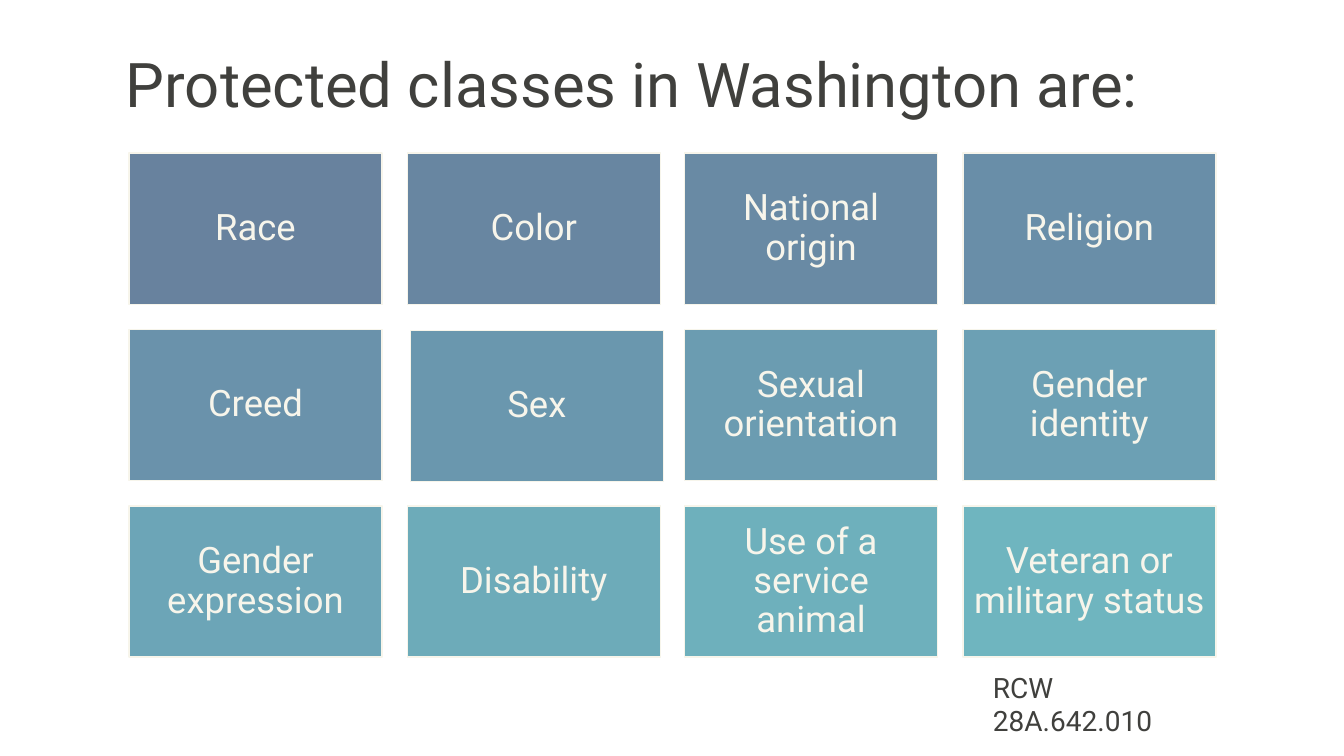
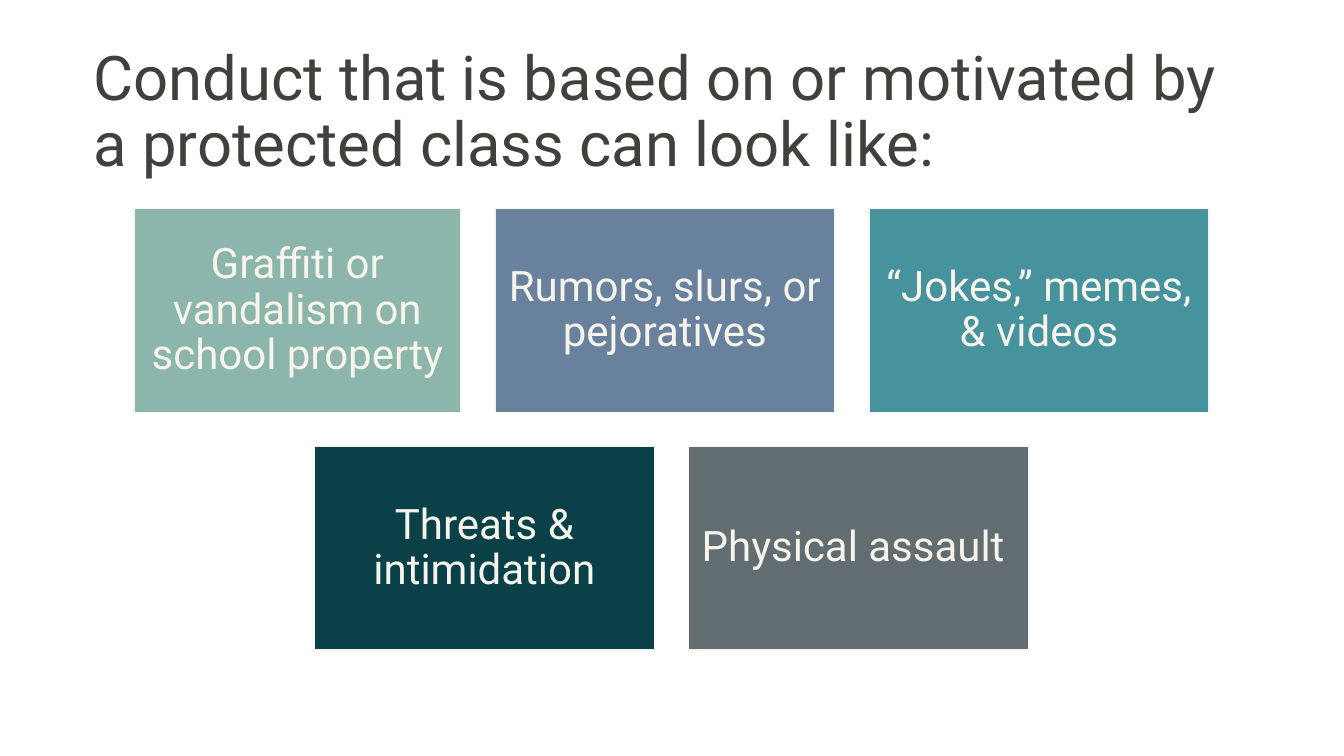
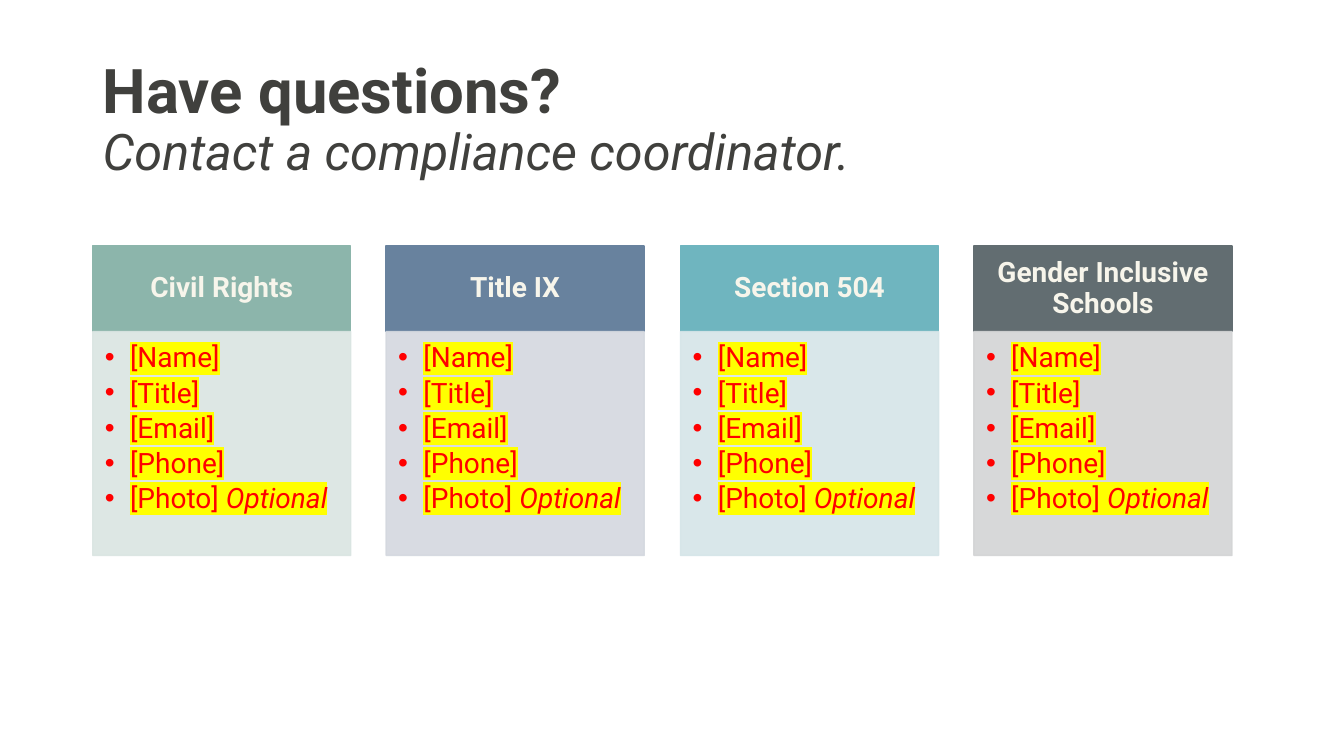
from dataclasses import dataclass

from lxml import etree
from pptx import Presentation
from pptx import util as u
from pptx.dml import color
from pptx.enum import shapes, text
from pptx.oxml import ns

PX = 9144


@dataclass(frozen=True)
class Theme:
    font: str = "Roboto"
    ink: str = "40403D"
    cream: str = "F7F5EB"
    sage: str = "8CB5AB"
    slate: str = "68829E"
    teal: str = "46929D"
    aqua: str = "6FB5BF"
    deep: str = "0A4149"
    gray: str = "626D71"
    pale_sage: str = "DAE5E2"
    pale_slate: str = "D4D8DF"
    pale_aqua: str = "D5E5E8"
    pale_gray: str = "D3D4D5"
    prompt: str = "FF0000"
    marker: str = "FFFF00"
    title_size: int = 44
    subtitle_size: int = 36
    conduct_size: int = 30
    class_size: int = 26
    small_size: int = 20
    line_spacing: float = 0.9
    pale_opacity: int = 90


THEME = Theme()

CLASSES = [
    ("Race", THEME.slate), ("Color", "6886A1"),
    ("National origin", "698AA4"), ("Religion", "698EA8"),
    ("Creed", "6A92AB"), ("Sex", "6A97AE"),
    ("Sexual orientation", "6B9CB1"), ("Gender identity", "6CA0B4"),
    ("Gender expression", "6CA5B7"), ("Disability", "6DABB9"),
    ("Use of a service animal", "6EB0BC"),
    ("Veteran or military status", THEME.aqua),
]
CLASS_NUDGES = {"Sex": (3, 1)}

CONDUCT_ROWS = [
    [("Graffiti or vandalism on school property", THEME.sage, 324),
     ("Rumors, slurs, or pejoratives", THEME.slate, 337),
     ("“Jokes,” memes, & videos", THEME.teal, 337)],
    [("Threats & intimidation", THEME.deep, 337),
     ("Physical assault ", THEME.gray, 337)],
]

COORDINATORS = [
    ("Civil Rights", THEME.sage, THEME.pale_sage),
    ("Title IX", THEME.slate, THEME.pale_slate),
    ("Section 504", THEME.aqua, THEME.pale_aqua),
    ("Gender Inclusive Schools", THEME.gray, THEME.pale_gray),
]
CONTACT_FIELDS = [
    ["[Name]"], ["[Title]"], ["[Email]"], ["[Phone]"],
    ["[Photo] ", "Optional"],
]


def px(*lengths):
    return [u.Emu(round(length) * PX) for length in lengths]


def rgb(value):
    return color.RGBColor.from_string(value)


def spread(left, width, item_width, count):
    pitch = (width - item_width) / (count - 1)
    return [round(left + i * pitch) for i in range(count)]


def add_run(paragraph, words, size, ink, bold=False, italic=False):
    run = paragraph.add_run()
    run.text = words
    font = run.font
    font.name, font.size, font.bold, font.italic = THEME.font, u.Pt(size), bold, italic
    font.color.rgb = rgb(ink)
    return run


def highlight(run, marker):
    ink_fill = run.font.fill._xPr.find(ns.qn("a:solidFill"))
    mark = etree.Element(ns.qn("a:highlight"))
    etree.SubElement(mark, ns.qn("a:srgbClr"), val=marker)
    ink_fill.addnext(mark)


def add_bullet(paragraph, hang):
    properties = paragraph._p.get_or_add_pPr()
    properties.set("marL", str(hang * PX))
    properties.set("indent", str(-hang * PX))
    etree.SubElement(properties, ns.qn("a:buFont"), typeface="Arial")
    etree.SubElement(properties, ns.qn("a:buChar"), char="•")


def set_frame(frame, insets, anchor):
    frame.word_wrap = True
    frame.vertical_anchor = anchor
    (frame.margin_left, frame.margin_top,
     frame.margin_right, frame.margin_bottom) = px(*insets)
    return frame


def add_text_area(slide, box, anchor):
    area = slide.shapes.add_textbox(*px(*box))
    return set_frame(area.text_frame, (10, 5, 10, 5), anchor)


def add_title(slide, box, words, anchor, bold=False):
    title = add_text_area(slide, box, anchor).paragraphs[0]
    title.line_spacing = THEME.line_spacing
    add_run(title, words, THEME.title_size, THEME.ink, bold)
    return title


def add_panel(slide, box, fill, border, opacity=100):
    panel = slide.shapes.add_shape(shapes.MSO_SHAPE.RECTANGLE, *px(*box))
    panel.shadow.inherit = False
    panel.fill.solid()
    panel.fill.fore_color.rgb = rgb(fill)
    panel.line.color.rgb = rgb(border)
    panel.line.width = u.Pt(1)
    if opacity < 100:
        for tint in panel._element.spPr.iter(ns.qn("a:srgbClr")):
            etree.SubElement(tint, ns.qn("a:alpha"), val=str(opacity * 1000))
    return panel


def add_tile(slide, box, words, fill, border, size, insets, bold=False):
    tile = add_panel(slide, box, fill, border)
    frame = set_frame(tile.text_frame, insets, text.MSO_ANCHOR.MIDDLE)
    label = frame.paragraphs[0]
    label.alignment = text.PP_ALIGN.CENTER
    label.line_spacing = THEME.line_spacing
    add_run(label, words, size, THEME.cream, bold)


def add_class_grid(slide, box):
    left, top, width, height = box
    columns, rows, tile_width, tile_height = 4, 3, 251, 150
    lefts = spread(left, width, tile_width, columns)
    tops = spread(top, height, tile_height, rows)
    for i, (words, fill) in enumerate(CLASSES):
        row, column = divmod(i, columns)
        dx, dy = CLASS_NUDGES.get(words, (0, 0))
        tile_box = (lefts[column] + dx, tops[row] + dy, tile_width, tile_height)
        add_tile(slide, tile_box, words, fill, THEME.cream,
                 THEME.class_size, (10, 11, 10, 11))


def add_conduct_rows(slide, box):
    left, top, width, height = box
    gap = 34
    tile_height = (height - gap) / 2
    for i, row in enumerate(CONDUCT_ROWS):
        row_width = sum(tile[2] for tile in row) + gap * (len(row) - 1)
        x = left + (width - row_width) / 2
        y = top + i * (tile_height + gap)
        for words, fill, tile_width in row:
            add_tile(slide, (x, y, tile_width, tile_height), words, fill,
                     THEME.cream, THEME.conduct_size, (12, 12, 12, 12))
            x += tile_width + gap


def add_contact_card(slide, box, heading, fill, pale):
    left, top, width, height = box
    head_height = 85
    add_tile(slide, (left, top, width, head_height), heading, fill, fill,
             THEME.small_size, (16, 9, 16, 9), bold=True)
    details = add_panel(
        slide, (left, top + head_height, width, height - head_height),
        pale, pale, THEME.pale_opacity)
    frame = set_frame(details.text_frame, (12, 12, 16, 17), text.MSO_ANCHOR.TOP)
    for i, parts in enumerate(CONTACT_FIELDS):
        field = frame.add_paragraph() if i else frame.paragraphs[0]
        field.level = 1
        field.alignment = text.PP_ALIGN.LEFT
        field.line_spacing = THEME.line_spacing
        field.space_after = u.Pt(3.5)
        add_bullet(field, 25)
        for j, words in enumerate(parts):
            run = add_run(field, words, THEME.small_size, THEME.prompt, italic=j > 0)
            highlight(run, THEME.marker)


def add_contact_cards(slide, box):
    left, top, width, height = box
    card_width = 256
    lefts = spread(left, width, card_width, len(COORDINATORS))
    for x, coordinator in zip(lefts, COORDINATORS):
        add_contact_card(slide, (x, top, card_width, height), *coordinator)


def build_classes_slide(slide):
    add_title(slide, (115, 49, 1150, 96), "Protected classes in Washington are:",
              text.MSO_ANCHOR.TOP)
    add_class_grid(slide, (128, 152, 1078, 500))
    citation = add_text_area(slide, (975, 660, 238, 44), text.MSO_ANCHOR.TOP)
    add_run(citation.paragraphs[0], "RCW 28A.642.010", THEME.small_size, THEME.ink)


def build_conduct_slide(slide):
    add_title(slide, (83, 40, 1162, 145),
              "Conduct that is based on or motivated by a protected class can look like:",
              text.MSO_ANCHOR.MIDDLE)
    add_conduct_rows(slide, (133, 207, 1066, 438))


def build_contacts_slide(slide):
    title = add_title(slide, (92, 40, 1130, 160), "Have questions?",
                      text.MSO_ANCHOR.MIDDLE, bold=True)
    title.add_line_break()
    add_run(title, "Contact a compliance coordinator.", THEME.subtitle_size,
            THEME.ink, italic=True)
    add_contact_cards(slide, (92, 244, 1130, 307))


def main():
    deck = Presentation()
    deck.slide_width, deck.slide_height = px(1333, 750)
    for build in (build_classes_slide, build_conduct_slide, build_contacts_slide):
        build(deck.slides.add_slide(deck.slide_layouts[6]))
    deck.save("out.pptx")


if __name__ == "__main__":
    main()
